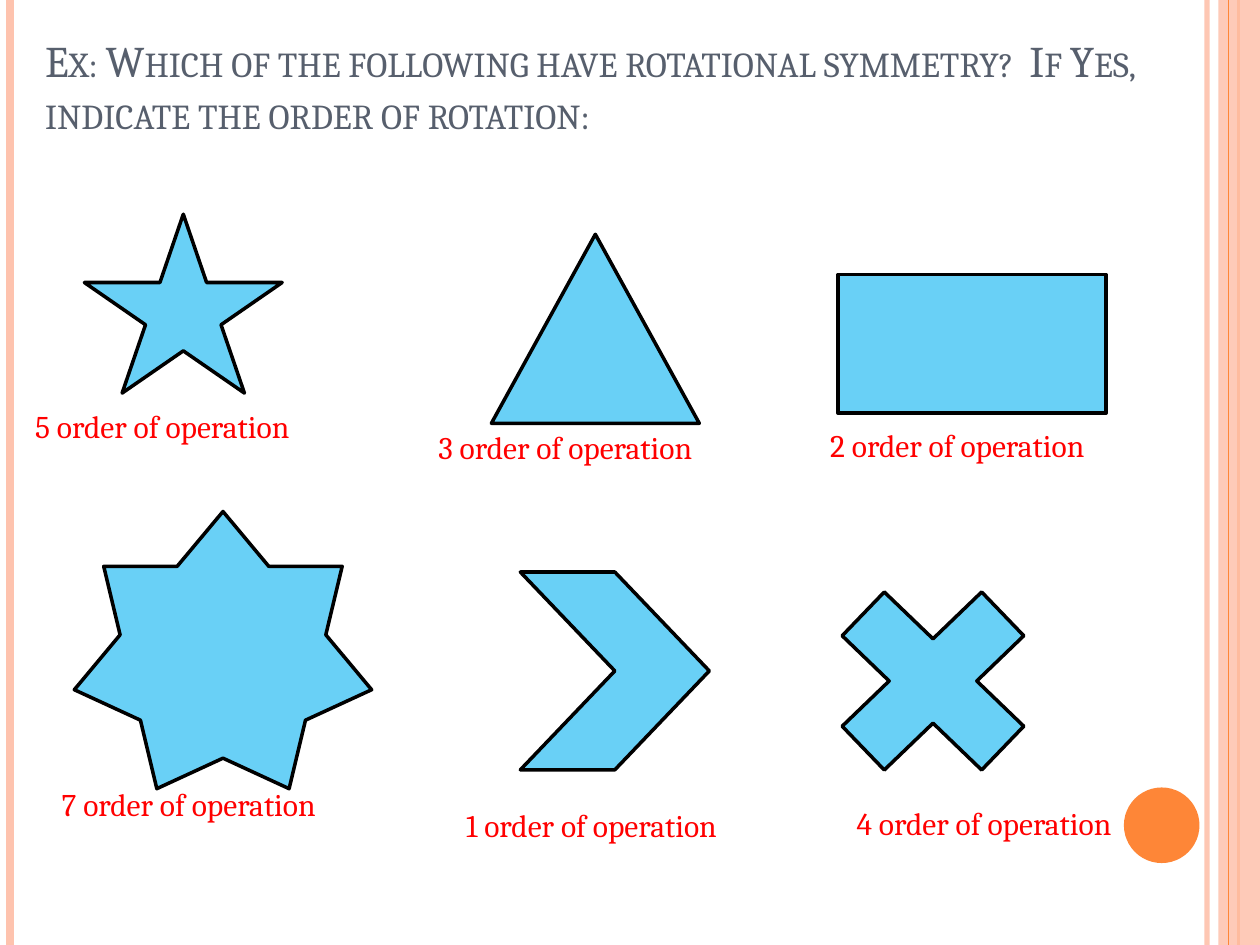
from pptx import Presentation
from pptx.dml.color import RGBColor
from pptx.enum.shapes import MSO_CONNECTOR, MSO_SHAPE
from pptx.enum.text import MSO_ANCHOR, MSO_AUTO_SIZE
from pptx.oxml.ns import qn
from pptx.util import Inches, Pt
from lxml import etree

STRAIGHT = MSO_CONNECTOR.STRAIGHT
RECT, OVAL = MSO_SHAPE.RECTANGLE, MSO_SHAPE.OVAL
STAR5, STAR7 = MSO_SHAPE.STAR_5_POINT, MSO_SHAPE.STAR_7_POINT
TRIANGLE, CHEVRON = MSO_SHAPE.ISOSCELES_TRIANGLE, MSO_SHAPE.CHEVRON
CROSS = MSO_SHAPE.MATH_MULTIPLY
TOP, BOTTOM = MSO_ANCHOR.TOP, MSO_ANCHOR.BOTTOM
GROW, FIXED = MSO_AUTO_SIZE.SHAPE_TO_FIT_TEXT, MSO_AUTO_SIZE.NONE

COLORS = {
    "peach": "FEC3AE",
    "orange": "FE8637",
    "title": "575F6D",
    "blue": "00B0F0",
    "black": "000000",
    "red": "FF0000",
}
TITLE = ("Ex: Which of the following have rotational symmetry?  "
         "If Yes, indicate the order of rotation:")
EDGE_LINES = [
    (9.58, "peach", 3, 93),
    (0.08, "peach", 4.5, 100),
    (9.83, "orange", 1.5, 100),
]
FIGURES = [
    (STAR5, (0.67, 1.7, 1.57, 1.42), 5, (0.18, 3.18)),
    (TRIANGLE, (3.9, 1.86, 1.65, 1.5), 3, (3.38, 3.35)),
    (RECT, (6.65, 2.18, 2.13, 1.1), 2, (6.49, 3.33)),
    (STAR7, (0.59, 4.06, 2.36, 2.2), 7, (0.39, 6.18)),
    (CHEVRON, (4.13, 4.54, 1.5, 1.57), 1, (3.6, 6.35)),
    (CROSS, (6.34, 4.38, 2.13, 2.05), 4, (6.7, 6.33)),
]


def rgb(name):
    """Return the named colour."""
    return RGBColor.from_string(COLORS[name])


def set_alpha(sp, percent):
    """Make the first colour of a shape partly transparent."""
    if percent < 100:
        color = next(sp.element.iter(qn("a:srgbClr")))
        etree.SubElement(color, qn("a:alpha")).set("val", str(percent * 1000))


def write(tf, text, size=18, color="red", font="Cambria", small_caps=False):
    """Write one formatted run into a text frame."""
    r = tf.paragraphs[0].add_run()
    r.text = text
    r.font.size = Pt(size)
    r.font.name = font
    r.font.color.rgb = rgb(color)
    if small_caps:
        r.font._element.set("cap", "small")


class SlideBuilder:
    """Hold the figure style and the current slide."""

    outline = "black"
    outline_width = 2

    def __init__(self, prs):
        """Add a blank slide."""
        self.s = prs.slides.add_slide(prs.slide_layouts[6])

    def vertical(self, x, color, width, alpha=100):
        """Draw a line down the full height of the slide."""
        line = self.s.shapes.add_connector(
            STRAIGHT, Inches(x), Inches(0), Inches(x), Inches(7.5))
        line.line.color.rgb = rgb(color)
        line.line.width = Pt(width)
        set_alpha(line, alpha)
        etree.SubElement(line.element.spPr, qn("a:effectLst"))

    def shape(self, kind, box, color, alpha=100, outlined=False):
        """Draw a filled preset shape."""
        sp = self.s.shapes.add_shape(kind, *map(Inches, box))
        sp.shadow.inherit = False
        sp.fill.solid()
        sp.fill.fore_color.rgb = rgb(color)
        set_alpha(sp, alpha)
        if outlined:
            sp.line.color.rgb = rgb(self.outline)
            sp.line.width = Pt(self.outline_width)
        else:
            sp.line.fill.background()

    def text(self, box, text, wrap=False, anchor=TOP, autosize=GROW, **style):
        """Add a text box."""
        tf = self.s.shapes.add_textbox(*map(Inches, box)).text_frame
        tf.word_wrap = wrap
        tf.auto_size = autosize
        tf.vertical_anchor = anchor
        write(tf, text, **style)


def main():
    """Build and save the rotational symmetry slide."""
    prs = Presentation()
    prs.slide_width, prs.slide_height = Inches(10), Inches(7.5)
    slide = SlideBuilder(prs)
    for edge in EDGE_LINES:
        slide.vertical(*edge)
    slide.shape(RECT, (9.67, 0, 0.33, 7.5), "peach", alpha=87)
    slide.vertical(9.75, "orange", 0.75)
    slide.shape(OVAL, (8.92, 6.25, 0.6, 0.6), "orange")
    slide.text((0.26, 0.21, 9.15, 0.94), TITLE, wrap=True, anchor=BOTTOM,
               autosize=FIXED, size=25, color="title", small_caps=True)
    for kind, box, _, _ in FIGURES:
        slide.shape(kind, box, "blue", alpha=59, outlined=True)
    for _, _, order, corner in FIGURES:
        slide.text((*corner, 2.49, 0.4), f"{order} order of operation")
    prs.save("out.pptx")


if __name__ == "__main__":
    main()
